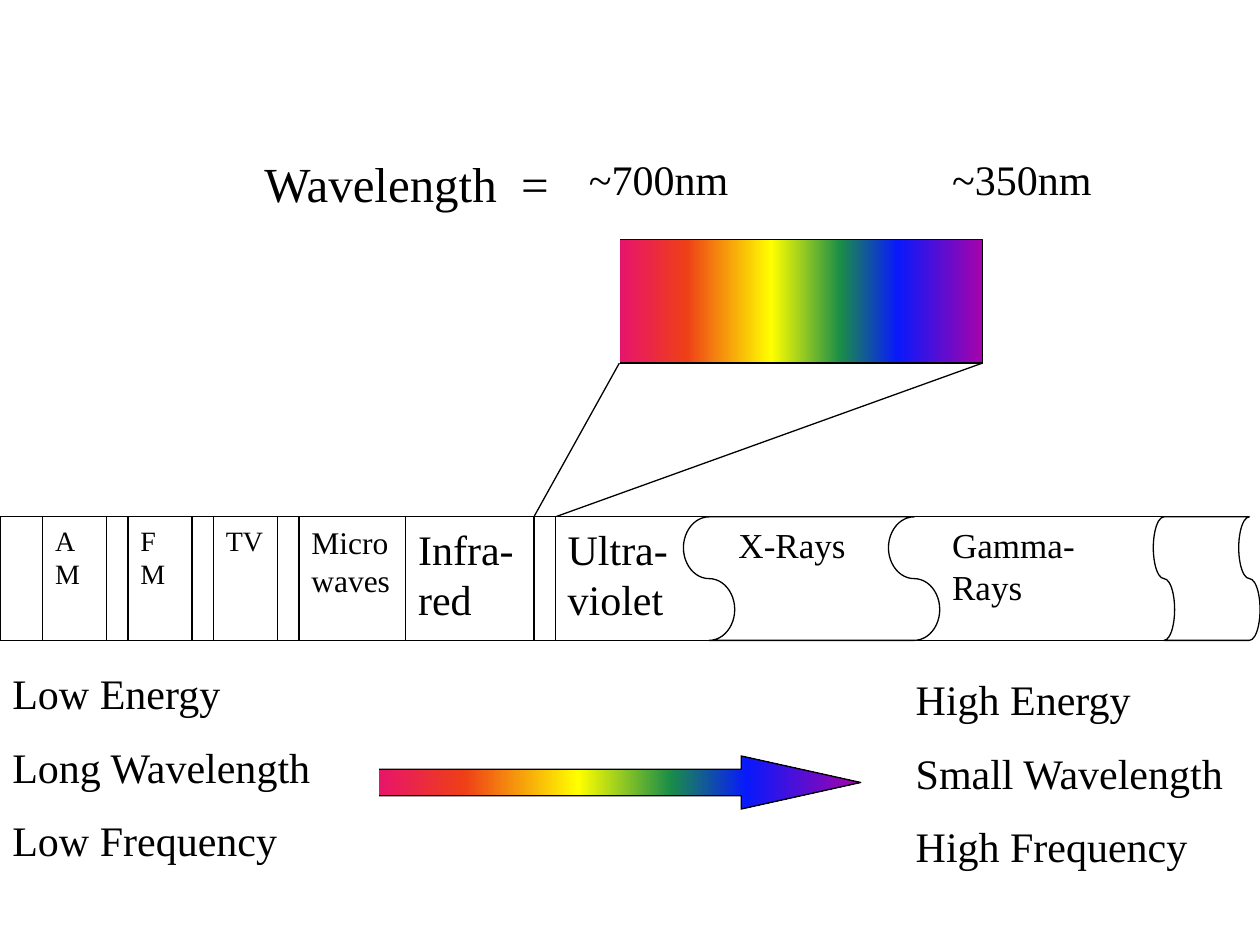
import pptx
import pptx.dml.color
import pptx.enum.shapes
import pptx.enum.text
import pptx.oxml.ns
import pptx.util
from lxml import etree

Cm, Pt = pptx.util.Cm, pptx.util.Pt
RGBColor = pptx.dml.color.RGBColor
MSO_SHAPE = pptx.enum.shapes.MSO_SHAPE
qn = pptx.oxml.ns.qn

BLACK = RGBColor(0x00, 0x00, 0x00)
WHITE = RGBColor(0xFF, 0xFF, 0xFF)
PURPLE = RGBColor(0xA6, 0x03, 0xAB)
PINK = RGBColor(0xE8, 0x17, 0x66)
RED = RGBColor(0xEE, 0x3F, 0x17)
YELLOW = RGBColor(0xFF, 0xFF, 0x00)
GREEN = RGBColor(0x1A, 0x8D, 0x48)
BLUE = RGBColor(0x08, 0x19, 0xFB)
RAINBOW = [(0, PURPLE), (12, PINK), (27, RED), (48, YELLOW),
           (65, GREEN), (79, BLUE), (100, PURPLE)]

FONT = {"name": "Times New Roman"}
FRAME = {"word_wrap": True, "vertical_anchor": pptx.enum.text.MSO_ANCHOR.TOP}
PARAGRAPH = {"alignment": pptx.enum.text.PP_ALIGN.LEFT}
SPACED = {**PARAGRAPH, "space_before": Pt(13)}

# The band is 58 units wide; every part of the spectrum sits on this grid
UNIT = 24.97 / 58
BAND_TOP, BAND_HEIGHT = 10.42, 2.49
RAINBOW_TOP = 4.83
RAINBOW_BOTTOM = RAINBOW_TOP + BAND_HEIGHT

# Label, left and width in units, text size
BANDS = [("Infra-red", 19, 6, 24), ("Ultra-\nviolet", 26, 9, 24),
         ("Microwaves", 14, 5, 18), ("TV", 10, 3, 16),
         ("FM", 6, 3, 16), ("AM", 2, 3, 16)]


def apply(target, values):
    for name, value in values.items():
        setattr(target, name, value)


def write(shape, text, size, paragraph_format=PARAGRAPH):
    frame = shape.text_frame
    frame.text = text
    apply(frame, FRAME)
    for paragraph in frame.paragraphs:
        apply(paragraph, paragraph_format)
        apply(paragraph.font, {**FONT, "size": Pt(size)})
        paragraph.font.color.rgb = BLACK


def add_label(slide, text, left, top, width, height, size, paragraph_format=PARAGRAPH):
    label = slide.shapes.add_textbox(Cm(left), Cm(top), Cm(width), Cm(height))
    write(label, text, size, paragraph_format)


def add_outlined(slide, kind, left, top, width, height, line=BLACK):
    shape = slide.shapes.add_shape(kind, Cm(left), Cm(top), Cm(width), Cm(height))
    shape.shadow.inherit = False
    shape.fill.solid()
    shape.fill.fore_color.rgb = WHITE
    shape.line.color.rgb = line
    shape.line.width = Pt(0.75)
    return shape


def add_band(slide, left, width):
    return add_outlined(slide, MSO_SHAPE.RECTANGLE, left * UNIT, BAND_TOP,
                        width * UNIT, BAND_HEIGHT)


def add_tape(slide, left, width):
    """Add a punched tape on its side, covering the given units of the band."""
    length = width * UNIT
    shift = (length - BAND_HEIGHT) / 2
    tape = add_outlined(slide, MSO_SHAPE.FLOWCHART_PUNCHED_TAPE, left * UNIT + shift,
                        BAND_TOP - shift, BAND_HEIGHT, length)
    tape.rotation = 90


def fill_rainbow(shape):
    shape.fill.gradient()
    shape.fill.gradient_angle = 0
    stops = shape._element.spPr.find(".//" + qn("a:gsLst"))
    for stop in list(stops):
        stops.remove(stop)
    for percent, color in RAINBOW:
        stop = etree.SubElement(stops, qn("a:gs"), pos=str(percent * 1000))
        etree.SubElement(stop, qn("a:srgbClr"), val=str(color))


def add_ray(slide, band_unit, rainbow_unit):
    ray = slide.shapes.add_connector(
        pptx.enum.shapes.MSO_CONNECTOR.STRAIGHT, Cm(band_unit * UNIT), Cm(BAND_TOP),
        Cm(rainbow_unit * UNIT), Cm(RAINBOW_BOTTOM))
    ray.line.color.rgb = BLACK
    ray.line.width = Pt(0.75)
    etree.SubElement(ray._element.spPr, qn("a:effectLst"))


def add_visible_light(slide):
    rainbow = add_outlined(slide, MSO_SHAPE.RECTANGLE, 27 * UNIT, RAINBOW_TOP,
                           19 * UNIT, BAND_HEIGHT)
    fill_rainbow(rainbow)
    # White cover over the purple start of the gradient
    add_outlined(slide, MSO_SHAPE.RECTANGLE, 25 * UNIT, 4.47, 4 * UNIT, 3.1, WHITE)
    add_ray(slide, 25, 29)
    add_ray(slide, 26, 46)
    for text, left in (("~350nm", 44), ("~700nm", 27)):
        add_label(slide, text, left * UNIT, 2.97, 8 * UNIT, 1.85, 24)
    add_label(slide, "Wavelength  =", 5.08, 2.97, 8.69, 1.45, 28, SPACED)


def add_spectrum(slide):
    for text, left, width, size in BANDS:
        write(add_band(slide, left, width), text, size)
    add_label(slide, "Gamma-\nRays", 44 * UNIT, BAND_TOP, 13 * UNIT, BAND_HEIGHT, 20)
    add_tape(slide, 54, 5)
    add_tape(slide, 32, 12)
    add_label(slide, "X-Rays", 34 * UNIT, BAND_TOP, 7 * UNIT, BAND_HEIGHT, 20)


def add_energy_scale(slide):
    add_label(slide, "High Energy\nSmall Wavelength\nHigh Frequency",
              18.21, 13.46, 7.42, 4.32, 24, SPACED)
    arrow = add_outlined(slide, MSO_SHAPE.RIGHT_ARROW, 6.4, 15.24, 10.95, 1.07)
    arrow.adjustments[0], arrow.adjustments[1] = 0.5, 2.25
    fill_rainbow(arrow)
    # White cover over the purple start of the arrow
    add_outlined(slide, MSO_SHAPE.RECTANGLE, 5.92, 15.44, 1.7, 0.64, WHITE)
    add_label(slide, "Low Energy\nLong Wavelength\nLow Frequency",
              0, 13.34, 7.42, 4.32, 24, SPACED)


def main():
    deck = pptx.Presentation()
    apply(deck, {"slide_width": Cm(25.4), "slide_height": Cm(19.05)})
    slide = deck.slides.add_slide(deck.slide_layouts[6])

    add_band(slide, 0, 58)
    add_visible_light(slide)
    add_spectrum(slide)
    add_energy_scale(slide)

    deck.save("out.pptx")


if __name__ == "__main__":
    main()
